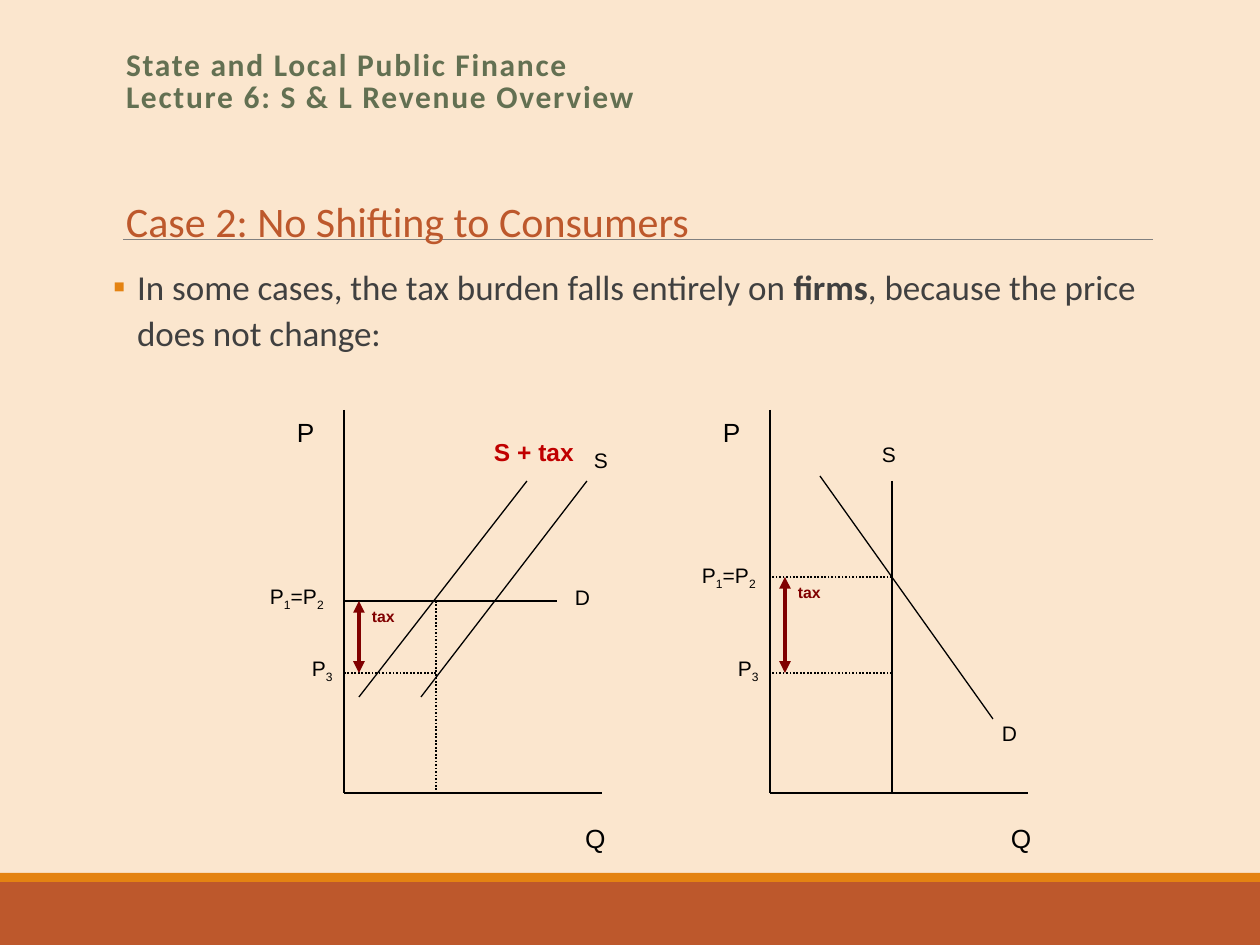
from lxml import etree
from pptx import Presentation
from pptx import util as u
from pptx.dml.color import RGBColor
from pptx.enum import dml, shapes, text
from pptx.oxml.ns import qn

PX = u.Inches(1) // 126
COLORS = {"page": "FBE6CE", "rust": "BD582C", "orange": "E48312", "rule": "808080",
          "green": "637052", "body": "404040", "ink": "000000",
          "red": "C00000", "maroon": "800000"}

# Content: spans are (text, style), style "b" bold, "sub" subscript, "br" line break after
COURSE = [("State and Local Public Finance", "br"),
          ("Lecture 6: S & L Revenue Overview", "")]
TITLE = [("Case 2: No Shifting to Consumers", "")]
BODY = [("In some cases, the tax burden falls entirely on ", ""), ("firms", "b"),
        (", because the price does not change:", "")]
PRICE_SAME = [("P", ""), ("1", "sub"), ("=P", ""), ("2", "sub")]
PRICE_NET = [("P", ""), ("3", "sub")]

# Graphs: x is measured from the vertical axis, y from the top of the page
AXIS_TOP, AXIS_BOTTOM, AXIS_WIDTH, NET_PRICE = 410, 793, 258, 673
GRAPHS = [
    {"axis": 344, "price": 601, "quantity": 92, "price_label": (-87, 577),
     "curves": [(0, 601, 213, 601), (77, 697, 243, 481), (15, 697, 183, 481)],
     "dotted": [(92, 601, 92, AXIS_BOTTOM)],
     "labels": [("S", 237, 441, 76, 12, "ink", False),
                ("S + tax", 137, 431, 106, 14, "red", True),
                ("D", 218, 578, 76, 12, "ink", False)]},
    {"axis": 770, "price": 577, "quantity": 122, "price_label": (-81, 556),
     "curves": [(122, 481, 122, AXIS_BOTTOM), (50, 476, 223, 719)],
     "dotted": [(122, 577, 0, 577)],
     "labels": [("S", 99, 435, 76, 12, "ink", False),
                ("D", 219, 714, 76, 12, "ink", False)]},
]

deck = Presentation()
deck.slide_width, deck.slide_height = 1260 * PX, 945 * PX
page = deck.slides.add_slide(deck.slide_layouts[6])


def rgb(name):
    return RGBColor.from_string(COLORS[name])


def add_text(spans, x, y, w, h, size=12, color="ink", font="Arial", bold=False,
             spacing=None, inset=13, anchor=text.MSO_ANCHOR.TOP):
    box = page.shapes.add_textbox(x * PX, y * PX, w * PX, h * PX)
    frame = box.text_frame
    frame.word_wrap = True
    frame.vertical_anchor = anchor
    frame.margin_left, frame.margin_right = inset * PX, 0
    para = frame.paragraphs[0]
    for words, style in spans:
        span = para.add_run()
        span.text = words
        span.font.size, span.font.name = u.Pt(size), font
        span.font.bold = bold or style == "b"
        span.font.color.rgb = rgb(color)
        properties = span.font._element
        if spacing:
            properties.set("spc", str(spacing))
        if style == "sub":
            properties.set("baseline", "-25000")
        if style == "br":
            para.add_line_break()
    return para


def add_line(x1, y1, x2, y2, color="ink", width=0.75, dotted=False, arrows=False):
    line = page.shapes.add_connector(shapes.MSO_CONNECTOR.STRAIGHT,
                                     x1 * PX, y1 * PX, x2 * PX, y2 * PX)
    line.line.color.rgb = rgb(color)
    line.line.width = u.Pt(width)
    if dotted:
        line.line.dash_style = dml.MSO_LINE.ROUND_DOT
    if arrows:
        outline = line.line._get_or_add_ln()
        for end in ("a:headEnd", "a:tailEnd"):
            etree.SubElement(outline, qn(end), type="triangle")
    etree.SubElement(line._element.spPr, qn("a:effectLst"))


# Background, footer bands and title rule
page.background.fill.solid()
page.background.fill.fore_color.rgb = rgb("page")
for top, height, color in [(882, 63, "rust"), (873, 9, "orange")]:
    band = page.shapes.add_shape(shapes.MSO_SHAPE.RECTANGLE,
                                 0, top * PX, deck.slide_width, height * PX)
    band.shadow.inherit = False
    band.fill.solid()
    band.fill.fore_color.rgb = rgb(color)
    band.line.fill.background()
add_line(123, 239, 1153, 239, "rule", 0.5)

# Headings and body
course = add_text(COURSE, 113, 42, 1040, 82, 18, "green", "Calibri", bold=True,
                  spacing=100, anchor=text.MSO_ANCHOR.MIDDLE)
course.line_spacing = 0.85
add_text(TITLE, 113, 189, 606, 63, 24, "rust", "Calibri")
body = add_text(BODY, 113, 255, 1040, 555, 20, "body", "Calibri", inset=0)
body.line_spacing = 1.1
body.space_before, body.space_after = u.Pt(6.8), u.Pt(1.1)
bullet = body._p.get_or_add_pPr()
bullet.set("marL", str(24 * PX))
bullet.set("indent", str(-24 * PX))
bullet_color = etree.SubElement(bullet, qn("a:buClr"))
etree.SubElement(bullet_color, qn("a:srgbClr"), val=COLORS["orange"])
etree.SubElement(bullet, qn("a:buFont"), typeface="Calibri")
etree.SubElement(bullet, qn("a:buChar"), char="▪")

# Supply and demand graphs
for graph in GRAPHS:
    axis, price = graph["axis"], graph["price"]
    add_line(axis, AXIS_TOP, axis, AXIS_BOTTOM)
    add_line(axis, AXIS_BOTTOM, axis + AXIS_WIDTH, AXIS_BOTTOM)
    for x1, y1, x2, y2 in graph["curves"]:
        add_line(axis + x1, y1, axis + x2, y2)
    net = (graph["quantity"], NET_PRICE, 0, NET_PRICE)
    for x1, y1, x2, y2 in graph["dotted"] + [net]:
        add_line(axis + x1, y1, axis + x2, y2, width=1, dotted=True)
    add_line(axis + 15, price, axis + 15, NET_PRICE, "maroon", 2.25, arrows=True)

    add_text([("P", "")], axis - 60, AXIS_TOP, 45, 96, 15)
    add_text([("Q", "")], axis + 228, 816, 45, 96, 15)
    x, y = graph["price_label"]
    add_text(PRICE_SAME, axis + x, y, 152, 72)
    add_text(PRICE_NET, axis - 45, 649, 60, 72)
    add_text([("tax", "")], axis + 15, price, 60, 72, 9, "maroon", bold=True)
    for words, x, y, width, size, color, bold in graph["labels"]:
        add_text([(words, "")], axis + x, y, width, 72, size, color, bold=bold)

deck.save("out.pptx")
